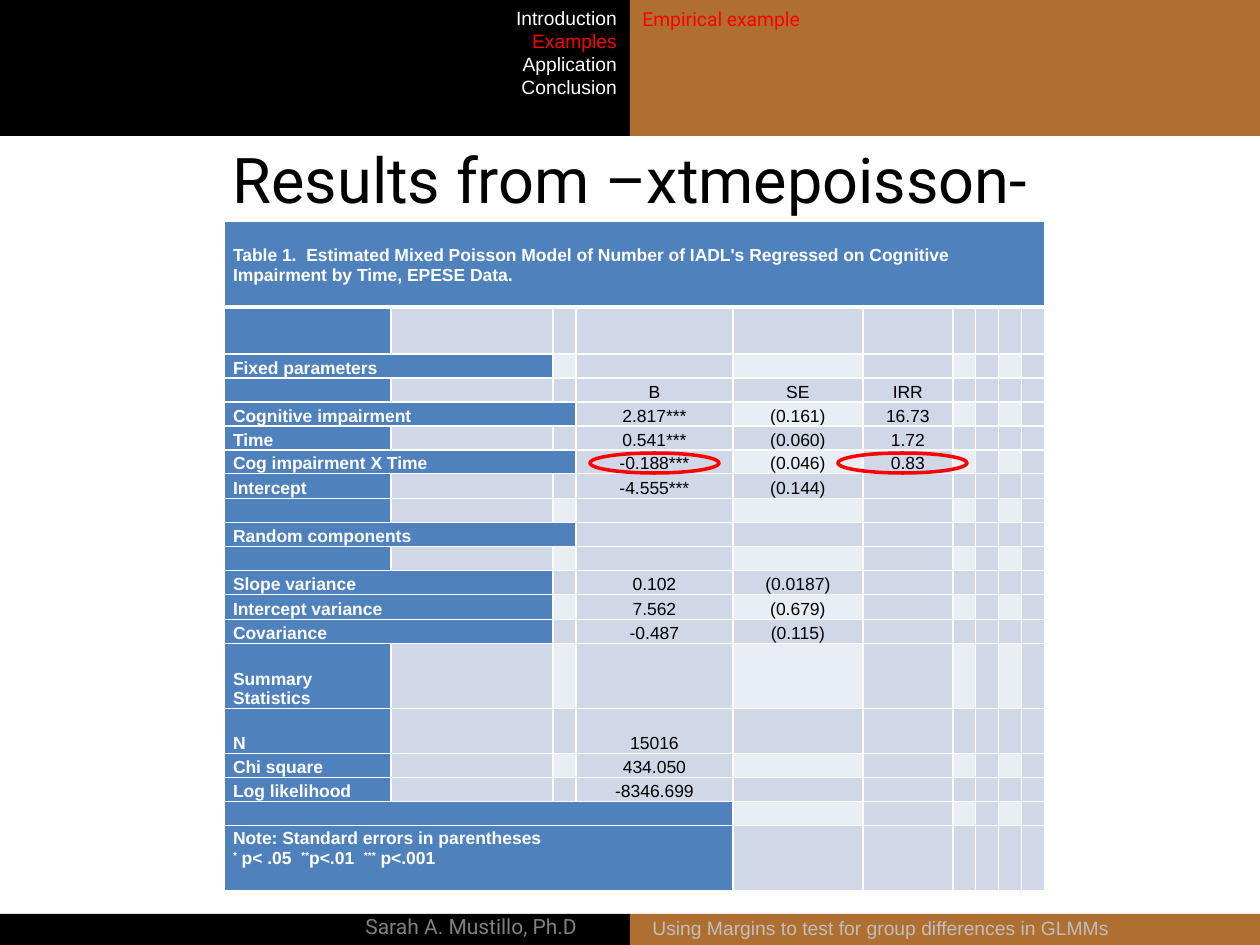
from itertools import pairwise

from lxml.etree import SubElement
from pptx import Presentation
from pptx.dml.color import RGBColor
from pptx.enum.shapes import MSO_SHAPE
from pptx.enum.text import MSO_ANCHOR, MSO_AUTO_SIZE, PP_ALIGN
from pptx.oxml.ns import qn
from pptx.util import Emu, Pt

BLACK = RGBColor(0x00, 0x00, 0x00)
WHITE = RGBColor(0xFF, 0xFF, 0xFF)
BROWN = RGBColor(0xAE, 0x6F, 0x30)
RED = RGBColor(0xFF, 0x00, 0x00)
GRAY = RGBColor(0x80, 0x80, 0x80)
SILVER = RGBColor(0xBF, 0xBF, 0xBF)
BLUE = RGBColor(0x4F, 0x81, 0xBD)
BAND = RGBColor(0xD0, 0xD8, 0xE8)
PALE = RGBColor(0xE9, 0xED, 0xF4)

COLUMN_EDGES = [224, 391, 553, 575, 732, 862, 952, 974, 997, 1019, 1040]
ROW_EDGES = [221, 307, 354, 378, 402, 426, 450, 474, 499, 523, 547,
             571, 595, 620, 644, 709, 754, 778, 802, 826, 891]
FIRST_VALUE_COLUMN = 3
CAPTION = ("Table 1.  Estimated Mixed Poisson Model of Number of IADL's "
           "Regressed on Cognitive Impairment by Time, EPESE Data.")
NOTE = [[("Note: Standard errors in parentheses", False)],
        [("*", True), (" p< .05  ", False), ("**", True), ("p<.01  ", False),
         ("***", True), (" p<.001", False)]]
ROWS = [
    (10, CAPTION, []),
    (1, "", []),
    (2, "Fixed parameters", []),
    (1, "", ["B", "SE", "IRR"]),
    (3, "Cognitive impairment", ["2.817***", "(0.161)", "16.73"]),
    (1, "Time", ["0.541***", "(0.060)", "1.72"]),
    (3, "Cog impairment X Time", ["-0.188***", "(0.046)", "0.83"]),
    (1, "Intercept", ["-4.555***", "(0.144)"]),
    (1, "", []),
    (3, "Random components", []),
    (1, "", []),
    (2, "Slope variance", ["0.102", "(0.0187)"]),
    (2, "Intercept variance", ["7.562", "(0.679)"]),
    (2, "Covariance", ["-0.487", "(0.115)"]),
    (1, "Summary Statistics", []),
    (1, "N", ["15016"]),
    (1, "Chi square", ["434.050"]),
    (1, "Log likelihood", ["-8346.699"]),
    (4, "", []),
    (4, NOTE, []),
]


def px(length):
    """Turn pixels into EMU."""
    return Emu(round(length * 914400 / 126))


def add_span(para, text, size, color, font="Arial", bold=False):
    """Add one formatted run to a paragraph."""
    span = para.add_run()
    span.text = text
    span.font.size = Pt(size)
    span.font.name = font
    span.font.bold = bold
    span.font.color.rgb = color
    return span


def add_shape(page, kind, left, top, width, height, fill=None, line=None):
    """Add a preset shape with an optional fill and outline."""
    shape = page.shapes.add_shape(kind, px(left), px(top), px(width), px(height))
    shape.shadow.inherit = False
    if fill is None:
        shape.fill.background()
    else:
        shape.fill.solid()
        shape.fill.fore_color.rgb = fill
    if line is None:
        shape.line.fill.background()
    else:
        shape.line.color.rgb = line
        shape.line.width = Pt(2)


def add_text(page, left, top, width, height, lines, size=11, font="Arial",
             align=PP_ALIGN.LEFT, right_inset=13):
    """Add a text box with one paragraph for each (text, colour) line."""
    box = page.shapes.add_textbox(px(left), px(top), px(width), px(height))
    frame = box.text_frame
    frame.word_wrap = True
    frame.margin_right = px(right_inset)
    for index, (text, color) in enumerate(lines):
        para = frame.add_paragraph() if index else frame.paragraphs[0]
        para.alignment = align
        add_span(para, text, size, color, font)


def set_title(page, text):
    """Place and format the title."""
    title = page.shapes.title
    title.left, title.top, title.width, title.height = map(px, (0, 136, 1260, 85))
    frame = title.text_frame
    frame.auto_size = MSO_AUTO_SIZE.NONE
    frame.vertical_anchor = MSO_ANCHOR.MIDDLE
    para = frame.paragraphs[0]
    para.alignment = PP_ALIGN.CENTER
    add_span(para, text, 36, BLACK, "Roboto")


def set_border(cell, side, points):
    """Draw one white cell border."""
    properties = cell._tc.get_or_add_tcPr()
    line = SubElement(properties, qn(f"a:ln{side}"), w=str(Pt(points)))
    fill = SubElement(line, qn("a:solidFill"))
    SubElement(fill, qn("a:srgbClr"), val=str(WHITE))


def format_cell(cell, row, column, head_span):
    """Set borders, fill, insets and the size of an empty line."""
    for side in "LRTB":
        heavy = (row, side) in ((0, "B"), (1, "T"))
        set_border(cell, side, 3 if heavy else 1)
    banded = row % 2 == 0 and column % 2 == 0
    cell.fill.solid()
    cell.fill.fore_color.rgb = BLUE if column < head_span else PALE if banded else BAND
    cell.vertical_anchor = MSO_ANCHOR.BOTTOM
    cell.margin_left = cell.margin_right = px(9)
    cell.margin_top = cell.margin_bottom = 0
    SubElement(cell.text_frame.paragraphs[0]._p, qn("a:endParaRPr"), sz="1000")


def fill_head(cell, content):
    """Write a row heading given as plain text or as lines of spans."""
    lines = [[(content, False)]] if isinstance(content, str) else content
    frame = cell.text_frame
    for index, spans in enumerate(lines):
        para = frame.add_paragraph() if index else frame.paragraphs[0]
        for text, raised in spans:
            span = add_span(para, text, 10, WHITE, bold=True)
            if raised:
                span.font._element.set("baseline", "30000")


def add_results_table(page):
    """Add the table of model estimates."""
    left, top = COLUMN_EDGES[0], ROW_EDGES[0]
    frame = page.shapes.add_table(
        len(ROWS), len(COLUMN_EDGES) - 1, px(left), px(top),
        px(COLUMN_EDGES[-1] - left), px(ROW_EDGES[-1] - top))
    table = frame.table
    for column, (start, end) in zip(table.columns, pairwise(COLUMN_EDGES)):
        column.width = px(end - start)
    for row, (start, end) in zip(table.rows, pairwise(ROW_EDGES)):
        row.height = px(end - start)
    for row, (head_span, heading, values) in enumerate(ROWS):
        for column in range(len(table.columns)):
            format_cell(table.cell(row, column), row, column, head_span)
        head = table.cell(row, 0)
        if head_span > 1:
            head.merge(table.cell(row, head_span - 1))
        if heading:
            fill_head(head, heading)
        if heading in (CAPTION, NOTE):
            head.margin_bottom = px(22)
        for column, value in enumerate(values, FIRST_VALUE_COLUMN):
            para = table.cell(row, column).text_frame.paragraphs[0]
            para.alignment = PP_ALIGN.CENTER
            add_span(para, value, 10, BLACK)


def main():
    """Build the slide and save it."""
    deck = Presentation()
    deck.slide_width, deck.slide_height = px(1260), px(945)
    page = deck.slides.add_slide(deck.slide_layouts[5])
    for top, height in ((0, 136), (914, 31)):
        for left, color in ((0, BLACK), (630, BROWN)):
            add_shape(page, MSO_SHAPE.RECTANGLE, left, top, 630, height, fill=color)
    add_text(page, 0, 907, 630, 38, [("Sarah A. Mustillo, Ph.D", GRAY)], 12,
             "Roboto", PP_ALIGN.RIGHT, right_inset=53)
    set_title(page, "Results from –xtmepoisson-")
    sections = [("Introduction", WHITE), ("Examples", RED),
                ("Application", WHITE), ("Conclusion", WHITE)]
    add_text(page, 14, 0, 616, 106, sections, align=PP_ALIGN.RIGHT)
    add_text(page, 630, 1, 630, 37, [("Empirical example", RED)], font="Roboto")
    add_text(page, 640, 910, 605, 37,
             [("Using Margins to test for group differences in GLMMs", SILVER)])
    add_results_table(page)
    for left in (590, 838):
        add_shape(page, MSO_SHAPE.OVAL, left, 453, 129, 20, line=RED)
    deck.save("out.pptx")


if __name__ == "__main__":
    main()
